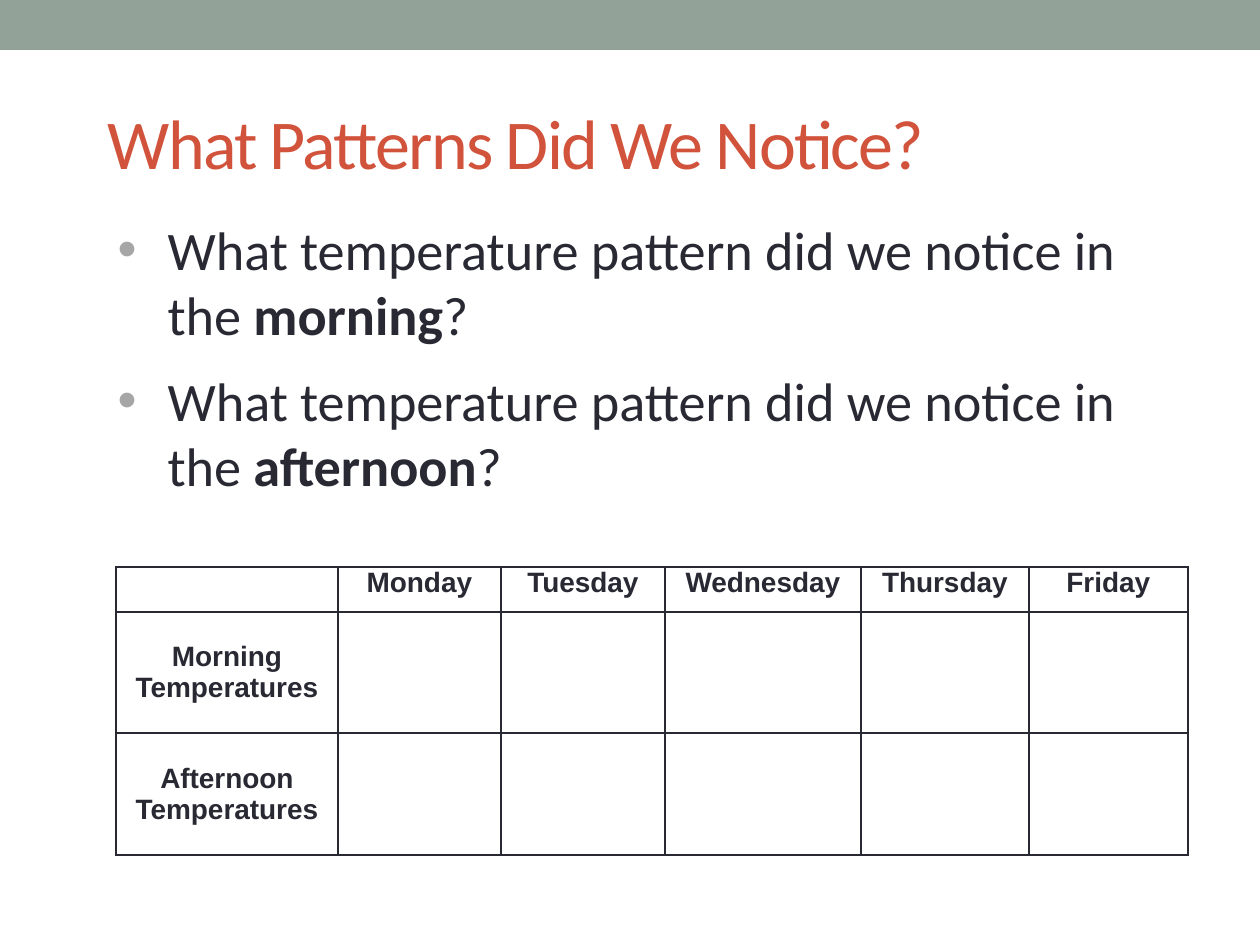
import pptx
import pptx.util
import pptx.oxml
import pptx.oxml.ns
import pptx.dml.color
import pptx.enum.shapes
import pptx.enum.text
from dataclasses import dataclass

RGB = pptx.dml.color.RGBColor
ALIGN = pptx.enum.text.PP_ALIGN
ANCHOR = pptx.enum.text.MSO_ANCHOR
Pt = pptx.util.Pt

SAGE = RGB(0x93, 0xA2, 0x99)
RUST = RGB(0xD2, 0x53, 0x3C)
INK = RGB(0x29, 0x29, 0x34)
GREY = RGB(0xA6, 0xA6, 0xA6)

SCALE = 914400 / 126
NS = pptx.oxml.ns.nsdecls("a")


@dataclass
class Box:
    left: int
    top: int
    width: int
    height: int


@dataclass
class Style:
    font: str
    size: int
    color: RGB
    bold: bool = False


@dataclass
class Item:
    lead: str
    key: str
    tail: str


TITLE = Style("Calibri", 40, RUST)
BODY = Style("Calibri", 31, INK)
STRONG = Style("Calibri", 31, INK, True)
LABEL = Style("Arial", 16, INK, True)

ASK = "What temperature pattern did we notice in the "
ITEMS = [Item(ASK, "morning", "?"), Item(ASK, "afternoon", "?")]
DAYS = ["Monday", "Tuesday", "Wednesday", "Thursday", "Friday"]
TIMES = ["Morning", "Afternoon"]
COLS = [222, 163, 164, 196, 168, 159]
ROWS = [45, 121, 122]


def emu(px: int) -> int:
    return round(px * SCALE)


def place(shape, box: Box) -> None:
    shape.left, shape.top = emu(box.left), emu(box.top)
    shape.width, shape.height = emu(box.width), emu(box.height)


def add_run(para, text: str, style: Style):
    run = para.add_run()
    run.text = text
    font = run.font
    font.name, font.size, font.bold = style.font, Pt(style.size), style.bold
    font.color.rgb = style.color
    return run


def add_band(slide, box: Box) -> None:
    band = slide.shapes.add_shape(
        pptx.enum.shapes.MSO_SHAPE.RECTANGLE, 0, 0, 0, 0)
    place(band, box)
    band.shadow.inherit = False
    band.fill.solid()
    band.fill.fore_color.rgb = SAGE
    band.line.fill.background()


def fill_title(shape, box: Box, text: str) -> None:
    place(shape, box)
    frame = shape.text_frame
    frame.auto_size = pptx.enum.text.MSO_AUTO_SIZE.NONE
    frame.vertical_anchor = ANCHOR.MIDDLE
    para = frame.paragraphs[0]
    para.alignment = ALIGN.LEFT
    run = add_run(para, text, TITLE)
    run.font._element.set("spc", "-100")


def set_bullet(para) -> None:
    props = para._p.get_or_add_pPr()
    props.set("marL", str(emu(50)))
    props.set("indent", str(-emu(50)))
    for xml in (
        f'<a:buClr {NS}><a:srgbClr val="{GREY}"/></a:buClr>',
        f'<a:buFont {NS} typeface="Arial"/>',
        f'<a:buChar {NS} char="•"/>',
    ):
        props.append(pptx.oxml.parse_xml(xml))


def fill_body(shape, box: Box, items: list[Item]) -> None:
    place(shape, box)
    frame = shape.text_frame
    frame.auto_size = pptx.enum.text.MSO_AUTO_SIZE.NONE
    frame.vertical_anchor = ANCHOR.TOP
    for num, item in enumerate(items):
        para = frame.add_paragraph() if num else frame.paragraphs[0]
        para.alignment = ALIGN.LEFT
        para.space_before = Pt(12)
        set_bullet(para)
        add_run(para, item.lead, BODY)
        add_run(para, item.key, STRONG)
        add_run(para, item.tail, BODY)


def set_edges(cell) -> None:
    props = cell._tc.get_or_add_tcPr()
    for spot, side in enumerate("LRTB"):
        props.insert(spot, pptx.oxml.parse_xml(
            f'<a:ln{side} {NS} w="12700"><a:solidFill>'
            f'<a:srgbClr val="{INK}"/></a:solidFill></a:ln{side}>'))


def fill_cell(cell, text: str, anchor) -> None:
    cell.fill.background()
    set_edges(cell)
    cell.margin_left = cell.margin_right = emu(9)
    cell.margin_top = cell.margin_bottom = 0
    cell.vertical_anchor = anchor
    if text:
        para = cell.text_frame.paragraphs[0]
        para.alignment = ALIGN.CENTER
        add_run(para, text, LABEL)


def add_grid(slide, left: int, top: int) -> None:
    frame = slide.shapes.add_table(
        len(ROWS), len(COLS), emu(left), emu(top),
        emu(sum(COLS)), emu(sum(ROWS)))
    table = frame.table
    table.first_row = table.horz_banding = False
    for col, width in zip(table.columns, COLS):
        col.width = emu(width)
    for row, height in zip(table.rows, ROWS):
        row.height = emu(height)
    blank = [""] * len(DAYS)
    texts = [["", *DAYS]] + [[f"{time} Temperatures", *blank] for time in TIMES]
    for r, line in enumerate(texts):
        for c, text in enumerate(line):
            anchor = ANCHOR.MIDDLE if r and not c else ANCHOR.TOP
            fill_cell(table.cell(r, c), text, anchor)


def main() -> None:
    deck = pptx.Presentation()
    deck.slide_width, deck.slide_height = emu(1260), emu(945)
    slide = deck.slides.add_slide(deck.slide_layouts[1])
    add_band(slide, Box(0, 0, 1260, 50))
    fill_title(slide.shapes.title, Box(95, 73, 1102, 136),
               "What Patterns Did We Notice?")
    add_grid(slide, 116, 567)
    fill_body(slide.placeholders[1], Box(105, 210, 1071, 335), ITEMS)
    deck.save("out.pptx")


if __name__ == "__main__":
    main()
